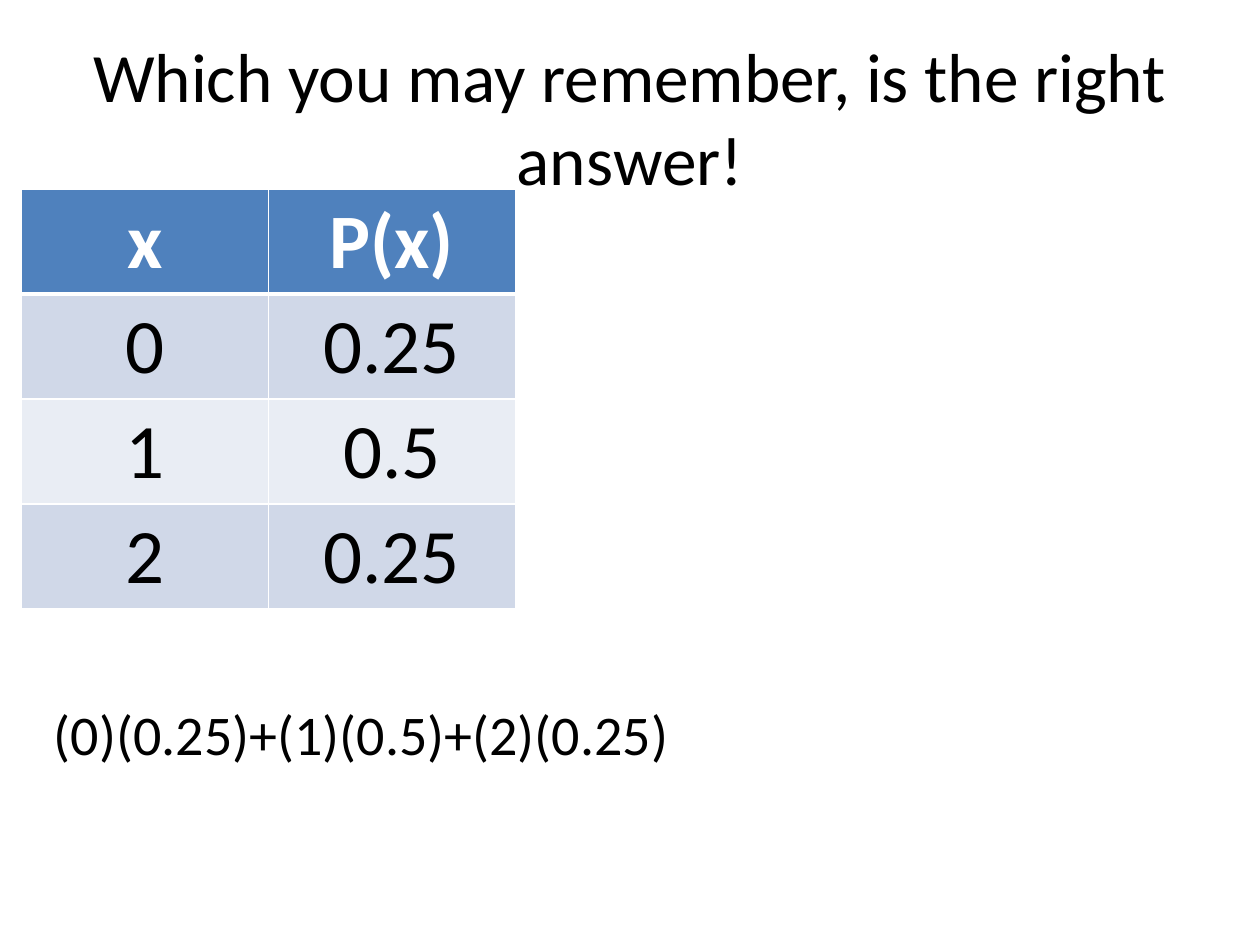
from lxml.etree import SubElement
from pptx import Presentation
from pptx.dml.color import RGBColor
from pptx.enum.text import MSO_ANCHOR, PP_ALIGN
from pptx.oxml.ns import qn
from pptx.util import Inches, Pt

COLORS = {
    "text": "000000",
    "white": "FFFFFF",
    "header": "4F81BD",
    "odd_row": "D0D8E8",
    "even_row": "E9EDF4",
}
DISTRIBUTION = [("x", "P(x)"), ("0", "0.25"), ("1", "0.5"), ("2", "0.25")]


class SlideBuilder:
    """Holds the text style and the slide being built."""

    font = "Calibri"

    def __init__(self, slide):
        self.slide = slide

    def set_text(self, text_frame, text, size, color="text", bold=False, align=PP_ALIGN.LEFT):
        text_frame.text = text
        paragraph = text_frame.paragraphs[0]
        paragraph.alignment = align
        font = paragraph.runs[0].font
        font.name, font.size, font.bold = self.font, Pt(size), bold
        font.color.rgb = RGBColor.from_string(COLORS[color])

    def text(self, text, left, top, width, height, size,
             align=PP_ALIGN.LEFT, anchor=MSO_ANCHOR.TOP):
        shape = self.slide.shapes.add_textbox(
            Inches(left), Inches(top), Inches(width), Inches(height))
        shape.text_frame.word_wrap = True
        shape.text_frame.vertical_anchor = anchor
        self.set_text(shape.text_frame, text, size, align=align)

    def borders(self, cell, top_width, bottom_width):
        properties = cell._tc.get_or_add_tcPr()
        widths = {"a:lnL": 1, "a:lnR": 1, "a:lnT": top_width, "a:lnB": bottom_width}
        for index, (tag, width) in enumerate(widths.items()):
            line = SubElement(properties, qn(tag), w=str(Pt(width)))
            fill = SubElement(line, qn("a:solidFill"))
            SubElement(fill, qn("a:srgbClr"), val=COLORS["white"])
            properties.insert(index, line)  # borders come before the cell fill

    def table(self, rows, left, top, width, height, size):
        table = self.slide.shapes.add_table(
            len(rows), len(rows[0]), Inches(left), Inches(top),
            Inches(width), Inches(height)).table
        for row_index, row in enumerate(rows):
            header = row_index == 0
            fill = "header" if header else "odd_row" if row_index % 2 else "even_row"
            for column_index, value in enumerate(row):
                cell = table.cell(row_index, column_index)
                cell.fill.solid()
                cell.fill.fore_color.rgb = RGBColor.from_string(COLORS[fill])
                self.set_text(cell.text_frame, value, size, "white" if header else "text",
                              header, PP_ALIGN.CENTER)
                # The thick rule under the header is shared with the first data row
                self.borders(cell, 3 if row_index == 1 else 1, 3 if header else 1)


def main():
    presentation = Presentation()
    presentation.slide_width, presentation.slide_height = Inches(10), Inches(7.5)
    builder = SlideBuilder(presentation.slides.add_slide(presentation.slide_layouts[6]))

    # Title
    builder.text("Which you may remember, is the right answer!", 0.5, 0.3, 9, 1.25, 39.6,
                 PP_ALIGN.CENTER, MSO_ANCHOR.MIDDLE)
    # Probability distribution
    builder.table(DISTRIBUTION, 0.17, 1.5, 3.92, 3.33, 44)
    # Expected value, one product for each data row
    products = [f"({x})({probability})" for x, probability in DISTRIBUTION[1:]]
    builder.text("+".join(products), 0.33, 5.5, 8.58, 0.64, 32)

    presentation.save("out.pptx")


if __name__ == "__main__":
    main()
